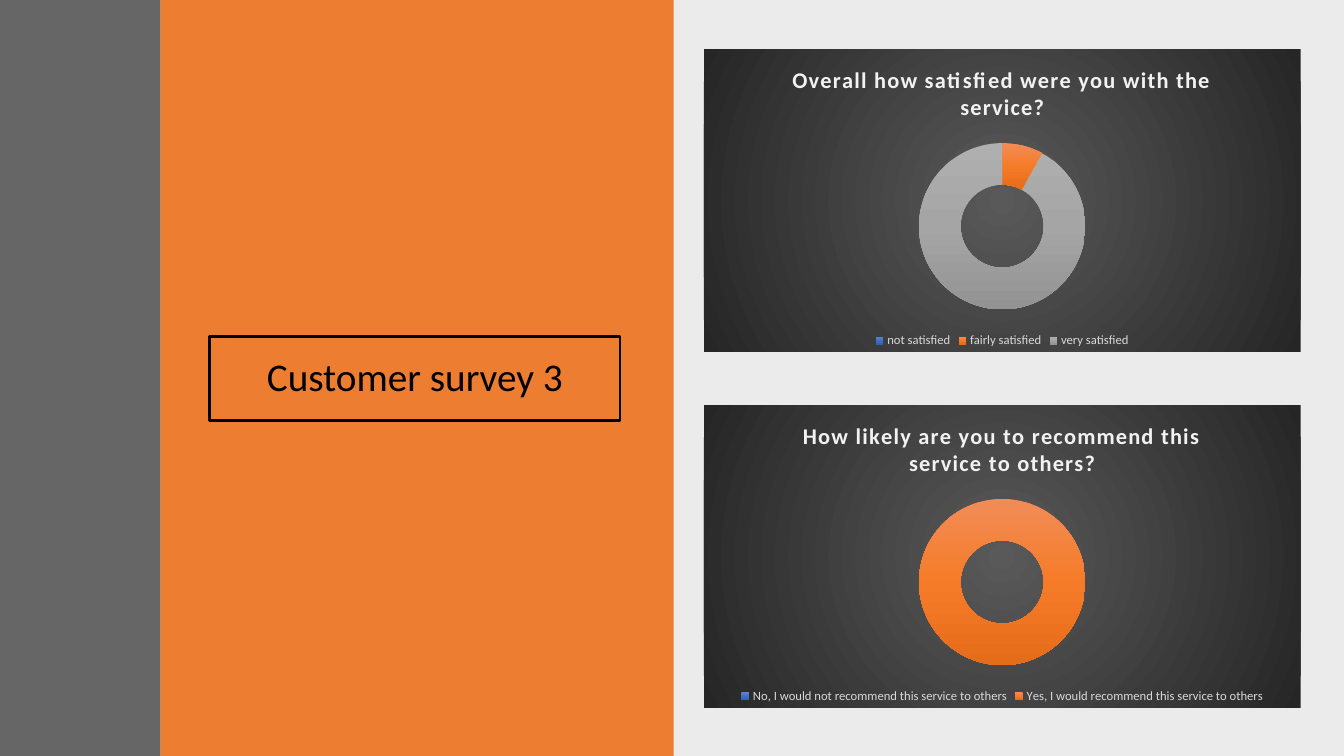
from dataclasses import dataclass

from pptx import Presentation
from pptx.chart.data import CategoryChartData
from pptx.dml.color import RGBColor
from pptx.enum.chart import XL_CHART_TYPE, XL_LEGEND_POSITION
from pptx.enum.shapes import MSO_SHAPE
from pptx.enum.text import MSO_ANCHOR, PP_ALIGN
from pptx.oxml import parse_xml
from pptx.oxml.ns import nsdecls, qn
from pptx.util import Inches, Pt

RECTANGLE = MSO_SHAPE.RECTANGLE
DOUGHNUT = XL_CHART_TYPE.DOUGHNUT
BOTTOM = XL_LEGEND_POSITION.BOTTOM
MIDDLE = MSO_ANCHOR.MIDDLE
CENTER = PP_ALIGN.CENTER


@dataclass(frozen=True)
class Theme:
    font: str = "Calibri"
    black: str = "000000"
    orange: str = "ED7D31"
    gray: str = "404040"
    chart_title: str = "F2F2F2"
    legend: str = "D9D9D9"
    chart_background: tuple = ("595959", "262626")
    slices: tuple = (
        ("6183CB", "3E70CA", "3062BB"),
        ("F18C57", "F67B28", "E56C19"),
        ("AFAFAF", "A5A5A5", "939393"),
    )
    heading_size: int = 28
    chart_title_size: int = 16
    chart_size: int = 10
    legend_size: int = 9


LINEAR = '<a:lin ang="5400000" scaled="0"/>'
RADIAL = ('<a:path path="circle"><a:fillToRect l="50000" t="50000" '
          'r="50000" b="50000"/></a:path>')


def gradient_fill(colors, direction):
    """Return a gradient with evenly spaced stops."""
    step = 100000 // (len(colors) - 1)
    stops = "".join(
        f'<a:gs pos="{index * step}"><a:srgbClr val="{color}"/></a:gs>'
        for index, color in enumerate(colors))
    return parse_xml(f'<a:gradFill {nsdecls("a")} rotWithShape="1">'
                     f'<a:gsLst>{stops}</a:gsLst>{direction}</a:gradFill>')


class SlideBuilder:
    def __init__(self, slide, theme):
        self.slide = slide
        self.theme = theme

    def style_font(self, font, size, color, bold=False):
        font.name = self.theme.font
        font.size = Pt(size)
        font.bold = bold
        font.color.rgb = RGBColor.from_string(color)

    def rectangle(self, left, top, width, height, color=None, opacity=100):
        shape = self.slide.shapes.add_shape(
            RECTANGLE, Inches(left), Inches(top), Inches(width), Inches(height))
        shape.shadow.inherit = False
        shape.line.fill.background()
        if color is None:
            shape.fill.background()
            return shape
        shape.fill.solid()
        shape.fill.fore_color.rgb = RGBColor.from_string(color)
        if opacity < 100:
            color_element = next(shape.element.spPr.iter(qn("a:srgbClr")))
            color_element.append(parse_xml(
                f'<a:alpha {nsdecls("a")} val="{opacity * 1000}"/>'))
        return shape

    def heading(self, text, left, top, width, height):
        shape = self.rectangle(left, top, width, height)
        shape.line.color.rgb = RGBColor.from_string(self.theme.black)
        shape.line.width = Pt(2)
        text_frame = shape.text_frame
        text_frame.text = text
        text_frame.word_wrap = True
        text_frame.vertical_anchor = MIDDLE
        paragraph = text_frame.paragraphs[0]
        paragraph.alignment = CENTER
        paragraph.line_spacing = 0.9
        self.style_font(paragraph.runs[0].font, self.theme.heading_size, self.theme.black)

    def doughnut(self, title, answers, left, top, width, height):
        theme = self.theme
        data = CategoryChartData()
        data.categories = list(answers)
        data.add_series("Series 1", list(answers.values()))
        chart = self.slide.shapes.add_chart(
            DOUGHNUT, Inches(left), Inches(top), Inches(width), Inches(height), data).chart
        self.style_font(chart.font, theme.chart_size, theme.black)

        # Chart title with wide letter spacing
        chart.has_title = True
        chart.chart_title.include_in_layout = False
        text_frame = chart.chart_title.text_frame
        text_frame.text = title
        self.style_font(text_frame.paragraphs[0].runs[0].font,
                        theme.chart_title_size, theme.chart_title, bold=True)
        next(chart.element.iter(qn("a:rPr"))).set("spc", "100")

        # Legend
        chart.has_legend = True
        chart.legend.position = BOTTOM
        chart.legend.include_in_layout = False
        self.style_font(chart.legend.font, theme.legend_size, theme.legend)

        # Slices
        plot = chart.plots[0]
        plot.vary_by_categories = True
        plot.has_data_labels = False
        for index in range(len(answers)):
            plot.series[0].points[index].format.line.fill.background()
        for point, colors in zip(chart.element.iter(qn("c:dPt")), theme.slices):
            point.find(qn("c:spPr")).insert(0, gradient_fill(colors, LINEAR))
        next(chart.element.iter(qn("c:holeSize"))).set("val", "75")

        # Ring position within the chart
        plot_area = next(chart.element.iter(qn("c:plotArea")))
        for layout in plot_area.findall(qn("c:layout")):
            plot_area.remove(layout)
        place = {"x": 0.36, "y": 0.31, "w": 0.28, "h": 0.55}
        values = "".join(f'<c:{name} val="{value}"/>' for name, value in place.items())
        plot_area.insert(0, parse_xml(
            f'<c:layout {nsdecls("c")}><c:manualLayout><c:layoutTarget val="inner"/>'
            f'<c:xMode val="edge"/><c:yMode val="edge"/>{values}'
            '</c:manualLayout></c:layout>'))

        # Chart background
        background = parse_xml(f'<c:spPr {nsdecls("c", "a")}><a:ln><a:noFill/></a:ln></c:spPr>')
        background.insert(0, gradient_fill(theme.chart_background, RADIAL))
        chart.element.find(qn("c:chart")).addnext(background)


def main():
    presentation = Presentation()
    presentation.slide_width = Inches(13.33)
    presentation.slide_height = Inches(7.5)
    theme = Theme()
    builder = SlideBuilder(
        presentation.slides.add_slide(presentation.slide_layouts[6]), theme)

    # Background panels and heading
    builder.rectangle(6.67, 0, 6.66, 7.5, theme.black, opacity=8)
    builder.rectangle(1.59, 0, 5.09, 7.5, theme.orange)
    builder.heading("Customer survey 3", 2.08, 3.34, 4.07, 0.83)
    builder.rectangle(0, 0, 1.59, 7.5, theme.gray, opacity=80)

    # Survey charts
    surveys = {
        "Overall how satisfied were you with the service?": {
            "not satisfied": 0, "fairly satisfied": 8, "very satisfied": 92},
        "How likely are you to recommend this service to others?": {
            "No, I would not recommend this service to others": 0,
            "Yes, I would recommend this service to others": 100},
    }
    for row, (question, answers) in enumerate(surveys.items()):
        builder.doughnut(question, answers, 6.98, 0.49 + row * 3.53, 5.92, 3)

    presentation.save("out.pptx")


if __name__ == "__main__":
    main()
